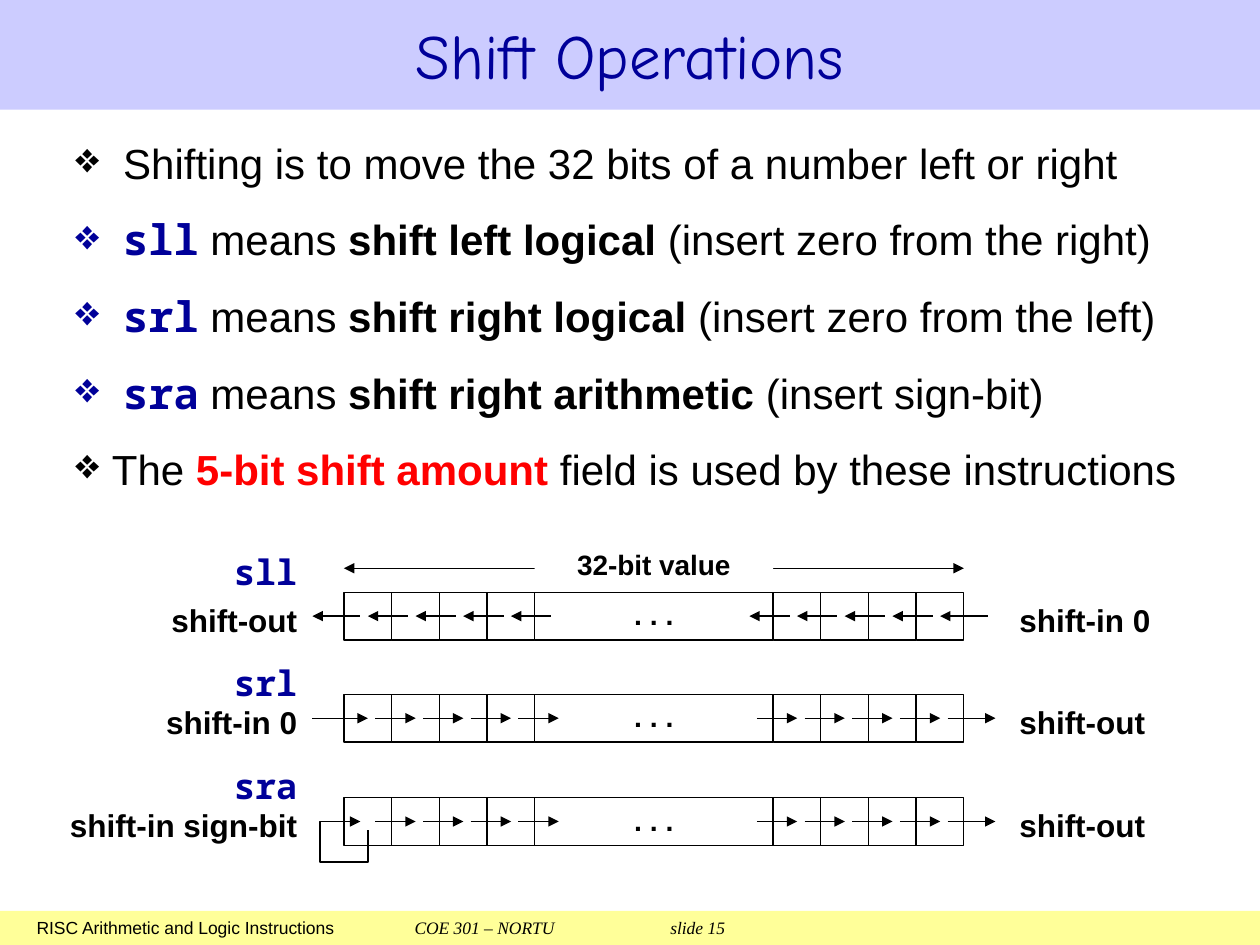
from dataclasses import dataclass

from lxml.etree import SubElement
from pptx import Presentation
from pptx.dml.color import RGBColor
from pptx.enum.shapes import MSO_CONNECTOR, MSO_SHAPE
from pptx.enum.text import MSO_ANCHOR, PP_ALIGN
from pptx.oxml.ns import qn
from pptx.util import Inches, Pt


@dataclass(frozen=True)
class Theme:
    black: RGBColor = RGBColor(0x00, 0x00, 0x00)
    white: RGBColor = RGBColor(0xFF, 0xFF, 0xFF)
    navy: RGBColor = RGBColor(0x00, 0x00, 0x99)
    red: RGBColor = RGBColor(0xFF, 0x00, 0x00)
    lavender: RGBColor = RGBColor(0xCC, 0xCC, 0xFF)
    yellow: RGBColor = RGBColor(0xFF, 0xFF, 0x99)
    sans: str = "Arial"
    mono: str = "Noto Sans Mono"
    serif: str = "Times New Roman"
    heading: str = "Comic Neue"
    title: Pt = Pt(36)
    body: Pt = Pt(24)
    dots: Pt = Pt(28)
    opcode: Pt = Pt(20)
    label: Pt = Pt(18)
    caption: Pt = Pt(16)
    footer: Pt = Pt(10)
    line: Pt = Pt(0.75)


T = Theme()


def set_text(sp, text, size, font=T.sans, color=T.black, align=PP_ALIGN.CENTER, bold=True):
    """Write one vertically centred line with no side margins; return its paragraph."""
    tf = sp.text_frame
    tf.word_wrap = True
    tf.vertical_anchor = MSO_ANCHOR.MIDDLE
    tf.margin_left = tf.margin_right = 0
    p = tf.paragraphs[0]
    p.text = text
    p.alignment = align
    for r in p.runs:
        r.font.size, r.font.name, r.font.bold = size, font, bold
        r.font.color.rgb = color
    return p


def style_arrow(sp, *ends):
    """Give a thin black line triangles at its headEnd and/or tailEnd."""
    sp.line.color.rgb = T.black
    sp.line.width = T.line
    sp_pr = sp._element.spPr
    for end in ends:
        SubElement(sp_pr.find(qn("a:ln")), qn(f"a:{end}"), type="triangle")
    SubElement(sp_pr, qn("a:effectLst"))


prs = Presentation()
prs.slide_width, prs.slide_height = Inches(10), Inches(7.5)
slide = prs.slides.add_slide(prs.slide_layouts[6])

# Footer and title bars
bars = []
for y, h, color in [(7.23, 0.27, T.yellow), (0, 0.87, T.lavender)]:
    sp = slide.shapes.add_shape(MSO_SHAPE.RECTANGLE, 0, Inches(y), Inches(10), Inches(h))
    sp.shadow.inherit = False
    sp.fill.solid()
    sp.fill.fore_color.rgb = color
    sp.line.fill.background()
    bars.append(sp)
footer, title = bars
set_text(title, "Shift Operations", T.title, T.heading, T.navy, bold=False)

p = set_text(footer, "RISC Arithmetic and Logic Instructions", T.footer,
             align=PP_ALIGN.LEFT, bold=False)
footer.text_frame.margin_left = Inches(0.29)
r = p.add_run()
r.text = "\tCOE 301 – NORTU\tslide 15"
r.font.size, r.font.name, r.font.italic = T.footer, T.serif, True
r.font.color.rgb = T.black
tabs = SubElement(p._p.get_or_add_pPr(), qn("a:tabLst"))
for x in (3, 5.03):
    SubElement(tabs, qn("a:tab"), pos=str(Inches(x)), algn="l")

# Bullets: each run is (text, font, colour, bold)
bullets = [[("Shifting is to move the 32 bits of a number left or right", T.sans, T.black, False)]]
for opcode, meaning, inserted in [
    ("sll", "shift left logical", "(insert zero from the right)"),
    ("srl", "shift right logical", "(insert zero from the left)"),
    ("sra", "shift right arithmetic", "(insert sign-bit)"),
]:
    bullets.append([
        (opcode, T.mono, T.navy, True),
        (" means ", T.sans, T.black, False),
        (meaning, T.sans, T.black, True),
        (f" {inserted}", T.sans, T.black, False),
    ])
bullets.append([
    ("The ", T.sans, T.black, False),
    ("5-bit shift amount ", T.sans, T.red, True),
    ("field is used by these instructions", T.sans, T.black, False),
])
tf = slide.shapes.add_textbox(Inches(0.5), Inches(1.04), Inches(9.1), Inches(2.96)).text_frame
tf.word_wrap = True
for i, runs in enumerate(bullets):
    p = tf.paragraphs[0] if i == 0 else tf.add_paragraph()
    p.space_before = Pt(15)
    indent = Inches(0.29 if runs is bullets[-1] else 0.38)
    pPr = p._p.get_or_add_pPr()
    pPr.set("marL", str(indent))
    pPr.set("indent", str(-indent))
    SubElement(pPr, qn("a:buChar"), char="❖")
    for text, font, color, bold in runs:
        r = p.add_run()
        r.text = text
        r.font.size, r.font.name, r.font.bold = T.body, font, bold
        r.font.color.rgb = color

# Registers: four bits, a wide gap of five, then four bits
left, width, height = 2.73, 4.92, 0.38
cell = width / 13
cells = [(i, 1) for i in range(4)] + [(4, 5)] + [(i, 1) for i in range(9, 13)]
arrow_steps = [0.5, 1.5, 2.5, 3.5, 8.5, 9.5, 10.5, 11.5]

for opcode, opcode_y, y, left_label, right_label in [
    ("sll", 4.38, 4.7, "shift-out", "shift-in 0"),
    ("srl", 5.26, 5.51, "shift-in 0", "shift-out"),
    ("sra", 6.08, 6.33, "shift-in sign-bit", "shift-out"),
]:
    shapes = slide.shapes.add_group_shape().shapes
    middle = y + height / 2
    for start, span in cells:
        sp = shapes.add_shape(MSO_SHAPE.RECTANGLE, Inches(left + start * cell), Inches(y),
                              Inches(span * cell), Inches(height))
        sp.shadow.inherit = False
        sp.fill.background()
        sp.line.color.rgb = T.black
        sp.line.width = T.line
        if span > 1:
            p = set_text(sp, ". . .", T.dots)
            p.runs[0].font._element.set("baseline", "20000")

    # Right shifts sit slightly further right than left shifts
    nudge, end = (0, "headEnd") if opcode == "sll" else (0.06, "tailEnd")
    arrows = [(left + step * cell + nudge, 0.32) for step in arrow_steps]
    arrows.append((left + 12.5 * cell + nudge, 0.38))
    if opcode != "sra":
        arrows.append((2.48, 0.38 + nudge))
    for x, length in arrows:
        arrow = shapes.add_connector(MSO_CONNECTOR.STRAIGHT, Inches(x), Inches(middle),
                                     Inches(x + length), Inches(middle))
        style_arrow(arrow, end)

    for x, top, w, h, text, size, font, color, align in [
        (0.53, y, 1.83, height, left_label, T.label, T.sans, T.black, PP_ALIGN.RIGHT),
        (8.09, y, 1.2, height, right_label, T.label, T.sans, T.black, PP_ALIGN.LEFT),
        (1.6, opcode_y, 0.76, 0.31, opcode, T.opcode, T.mono, T.navy, PP_ALIGN.RIGHT),
    ]:
        sp = shapes.add_textbox(Inches(x), Inches(top), Inches(w), Inches(h))
        p = set_text(sp, text, size, font, color, align)
        if size == T.label:
            p.line_spacing = 1.2

    if opcode == "sll":
        span = shapes.add_connector(MSO_CONNECTOR.STRAIGHT, Inches(left), Inches(4.51),
                                    Inches(left + width), Inches(4.51))
        style_arrow(span, "headEnd", "tailEnd")
        sp = shapes.add_textbox(Inches(left + 4 * cell), Inches(4.32),
                                Inches(5 * cell), Inches(0.32))
        sp.fill.solid()
        sp.fill.fore_color.rgb = T.white
        set_text(sp, "32-bit value", T.caption)
    elif opcode == "sra":
        loop = [(Inches(x), Inches(py)) for x, py in
                [(2.92, 6.59), (2.92, 6.84), (2.54, 6.84), (2.54, 6.52), (2.86, 6.52)]]
        builder = shapes.build_freeform(*loop[0])
        builder.add_line_segments(loop[1:], close=False)
        sign_loop = builder.convert_to_shape()
        sign_loop.fill.background()
        style_arrow(sign_loop, "tailEnd")

prs.save("out.pptx")
